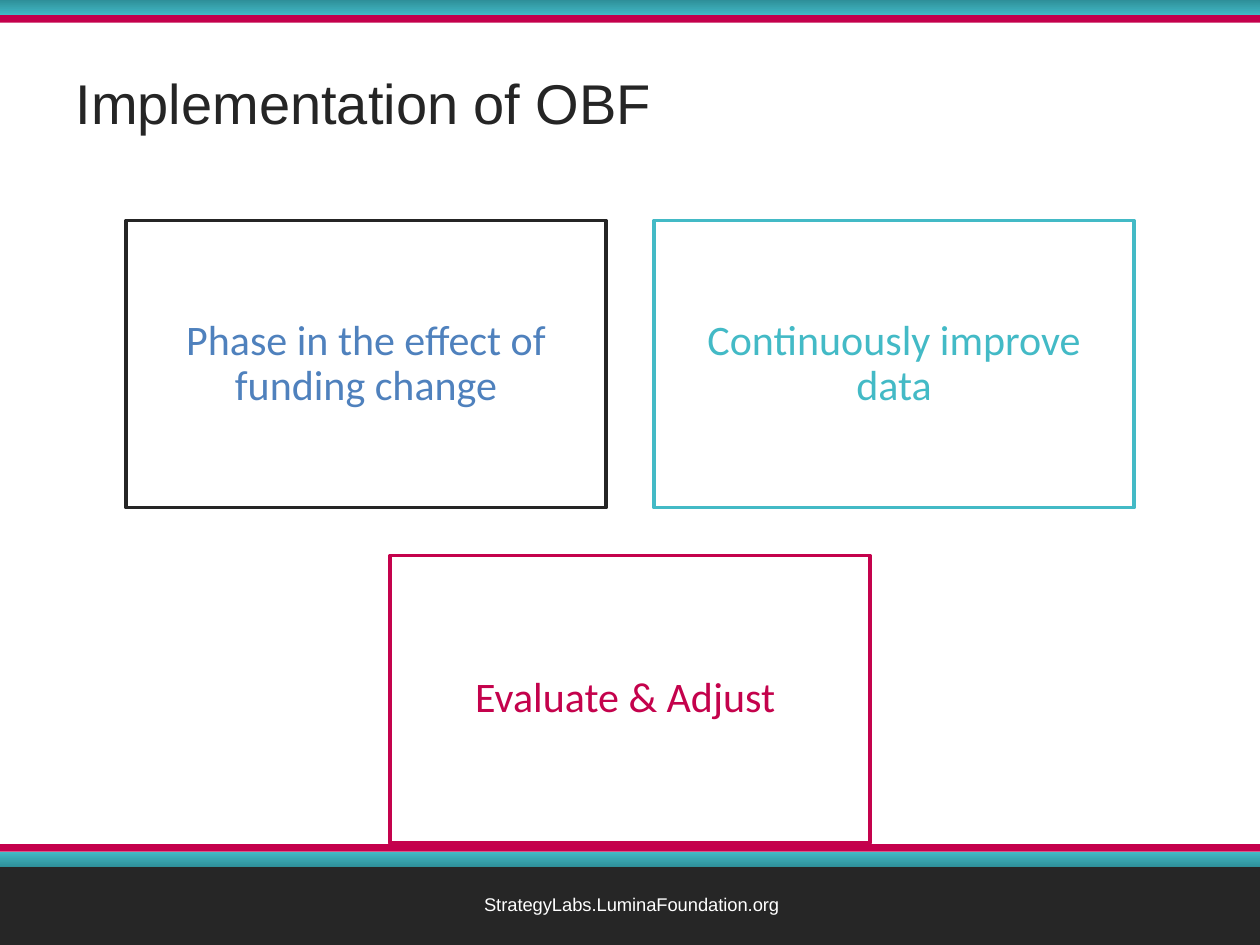
import pptx
import pptx.util
import pptx.dml.color
import pptx.enum.shapes
import pptx.enum.text

Inches = pptx.util.Inches
Pt = pptx.util.Pt
RGBColor = pptx.dml.color.RGBColor
ALIGN = pptx.enum.text.PP_ALIGN
MIDDLE = pptx.enum.text.MSO_ANCHOR.MIDDLE

WHITE = RGBColor(0xFF, 0xFF, 0xFF)
CHARCOAL = RGBColor(0x25, 0x25, 0x25)
FOOTER = RGBColor(0x26, 0x26, 0x26)
TEAL = RGBColor(0x43, 0xBA, 0xC6)
DARK_TEAL = RGBColor(0x2E, 0x8F, 0x99)
CRIMSON = RGBColor(0xC4, 0x00, 0x4C)
CARD_CRIMSON = RGBColor(0xC4, 0x02, 0x4C)
BLUE = RGBColor(0x4F, 0x81, 0xBD)

PAGE_WIDTH, PAGE_HEIGHT = 10, 7.5
CARD_WIDTH, CARD_HEIGHT, CARD_GAP = 3.81, 2.28, 0.38
CARD_TOP = 1.75
CARD_ROWS = [
    [("Phase in the effect of funding change", CHARCOAL, BLUE),
     ("Continuously improve data", TEAL, TEAL)],
    [("Evaluate & Adjust ", CARD_CRIMSON, CARD_CRIMSON)],
]


def write(shape, text, font_name, size, color, align):
    """Put one formatted paragraph into a shape."""
    frame = shape.text_frame
    frame.word_wrap = True
    frame.vertical_anchor = MIDDLE
    frame.text = text
    para = frame.paragraphs[0]
    para.alignment = align
    font = para.runs[0].font
    font.name, font.size, font.color.rgb = font_name, Pt(size), color
    return para


def add_rectangle(page, left, top, width, height, color):
    """Add a plain filled rectangle without outline or shadow."""
    box = page.shapes.add_shape(
        pptx.enum.shapes.MSO_SHAPE.RECTANGLE,
        Inches(left), Inches(top), Inches(width), Inches(height))
    box.shadow.inherit = False
    box.fill.solid()
    box.fill.fore_color.rgb = color
    box.line.fill.background()
    return box


def add_band(page, top, height, color, rotation=0):
    """Add a band across the full width of the page."""
    band = add_rectangle(page, 0, top, PAGE_WIDTH, height, color)
    band.rotation = rotation
    return band


def add_teal_band(page, top, rotation=0):
    """Add a band shaded from light to dark teal."""
    band = add_band(page, top, 0.12, TEAL, rotation)
    band.fill.gradient()
    band.fill.gradient_angle = 90
    for stop, color in zip(band.fill.gradient_stops, (DARK_TEAL, TEAL)):
        stop.color.rgb = color


def add_frame(page):
    """Add the bands and the address at the page edges."""
    add_band(page, 6.88, 0.62, FOOTER)
    add_teal_band(page, 6.76)
    add_band(page, 6.7, 0.06, CRIMSON)
    add_teal_band(page, 0, 180)
    add_band(page, 0.12, 0.06, CRIMSON, 180)
    address = page.shapes.add_textbox(
        Inches(3.01), Inches(7.03), Inches(4.01), Inches(0.29))
    write(address, "StrategyLabs.LuminaFoundation.org", "Arial", 10.5,
          WHITE, ALIGN.CENTER)


def add_title(page, text):
    """Place and format the title placeholder."""
    title = page.shapes.title
    title.left, title.top = Inches(0.5), Inches(0.34)
    title.width, title.height = Inches(9), Inches(0.94)
    write(title, text, "Arial", 32, CHARCOAL, ALIGN.LEFT)


def add_card(page, left, top, text, line_color, text_color):
    """Add an outlined card with centred text."""
    card = add_rectangle(page, left, top, CARD_WIDTH, CARD_HEIGHT, WHITE)
    card.line.color.rgb = line_color
    card.line.width = Pt(2)
    frame = card.text_frame
    frame.margin_left = frame.margin_right = Inches(0.1)
    frame.margin_top = frame.margin_bottom = Inches(0.1)
    para = write(card, text, "Calibri", 24, text_color, ALIGN.CENTER)
    para.line_spacing = 0.9


def add_cards(page):
    """Lay out each row of cards centred on the page."""
    for row_number, row in enumerate(CARD_ROWS):
        row_width = len(row) * (CARD_WIDTH + CARD_GAP) - CARD_GAP
        start = (PAGE_WIDTH - row_width) / 2
        top = CARD_TOP + row_number * (CARD_HEIGHT + CARD_GAP)
        for column, card in enumerate(row):
            add_card(page, start + column * (CARD_WIDTH + CARD_GAP), top, *card)


def main():
    """Build and save the slide."""
    deck = pptx.Presentation()
    deck.slide_width = Inches(PAGE_WIDTH)
    deck.slide_height = Inches(PAGE_HEIGHT)
    page = deck.slides.add_slide(deck.slide_layouts[5])
    add_frame(page)
    add_title(page, "Implementation of OBF")
    add_cards(page)
    deck.save("out.pptx")


if __name__ == "__main__":
    main()
